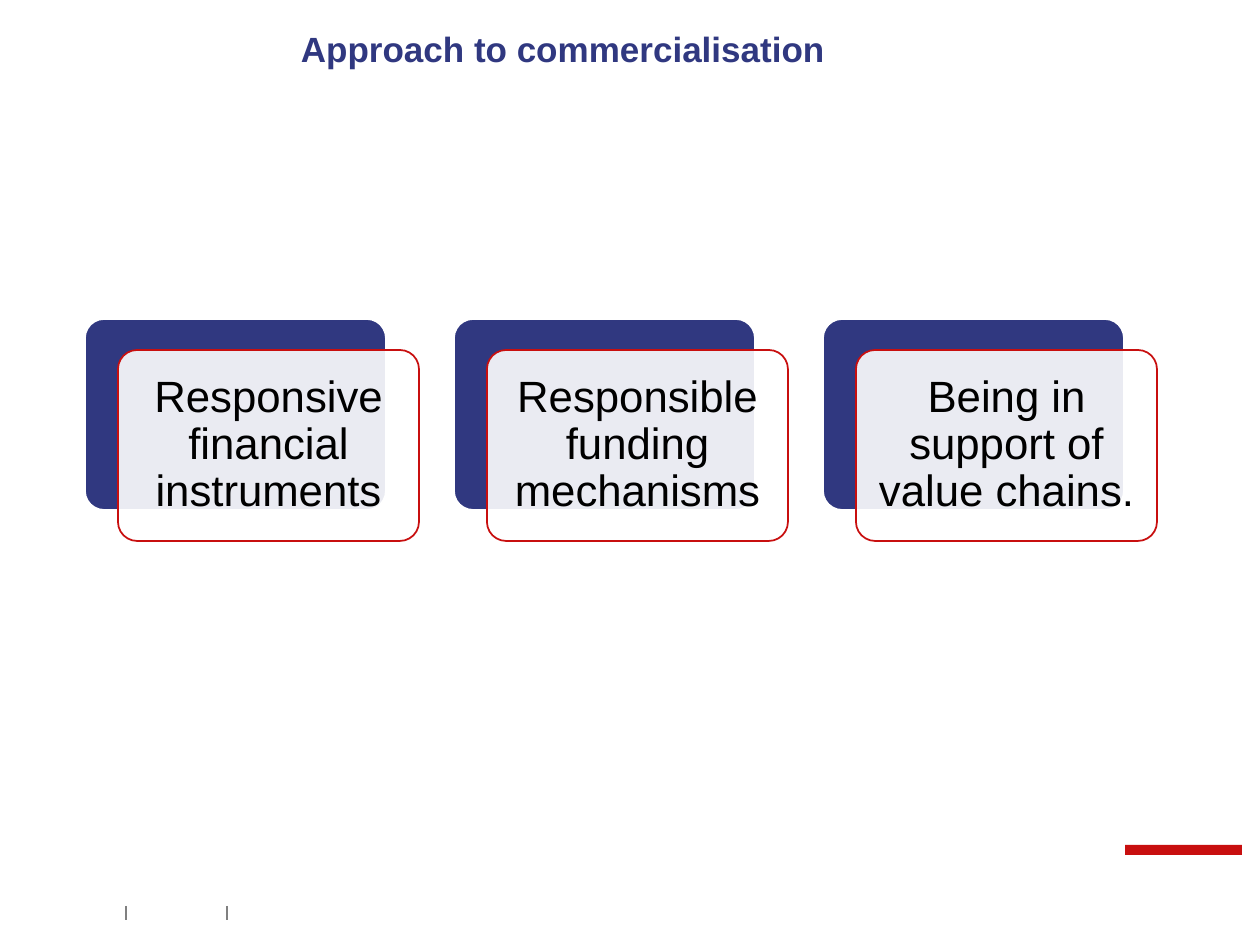
"""Build the slide on the approach to commercialisation."""
import pptx
import pptx.dml.color
import pptx.enum.shapes
import pptx.enum.text
import pptx.oxml
import pptx.oxml.ns
import pptx.util
from lxml import etree

EMU_PER_PX = 914400 / 126
NAVY, RED, GREY, WHITE, BLACK = "303880", "C80F0F", "808080", "FFFFFF", "000000"
SHAPES = pptx.enum.shapes.MSO_SHAPE
CARDS = [
    "Responsive financial instruments",
    "Responsible funding mechanisms",
    "Being in support of value chains.",
]
CARD_LEFT, CARD_TOP, CARD_PITCH = 85, 319, 369
CARD_WIDTH, CARD_HEIGHT = 301, 191
FRONT_SHIFT_X, FRONT_SHIFT_Y = 33, 31


def px(length):
    """Turn pixels into EMU."""
    return pptx.util.Emu(round(length * EMU_PER_PX))


def paint(color_format, color):
    """Set a colour from a hex string."""
    color_format.rgb = pptx.dml.color.RGBColor.from_string(color)


def add_block(shapes, kind, box, fill, line=None):
    """Add a filled preset shape, outlined if a line colour is given."""
    shape = shapes.add_shape(kind, *map(px, box))
    shape.shadow.inherit = False
    shape.fill.solid()
    paint(shape.fill.fore_color, fill)
    if line:
        paint(shape.line.color, line)
        shape.line.width = pptx.util.Pt(1)
    else:
        shape.line.fill.background()
    return shape


def set_opacity(shape, percent):
    """Make the solid fill of a shape partly transparent."""
    color = shape.fill._xPr.find(".//" + pptx.oxml.ns.qn("a:srgbClr"))
    alpha = etree.SubElement(color, pptx.oxml.ns.qn("a:alpha"))
    alpha.set("val", str(percent * 1000))


def write(text_frame, text, size, color, bold=False):
    """Write one centred paragraph and return it."""
    text_frame.word_wrap = True
    paragraph = text_frame.paragraphs[0]
    paragraph.alignment = pptx.enum.text.PP_ALIGN.CENTER
    paragraph.space_before = pptx.util.Pt(0)
    run = paragraph.add_run()
    run.text = text
    run.font.name = "Arial"
    run.font.size = pptx.util.Pt(size)
    run.font.bold = bold
    paint(run.font.color, color)
    return paragraph


def add_title(slide, text):
    """Place and format the title placeholder."""
    title = slide.shapes.title
    title.left, title.top, title.width, title.height = map(px, (248, 21, 630, 55))
    title.text_frame.vertical_anchor = pptx.enum.text.MSO_ANCHOR.TOP
    title.text_frame.auto_size = pptx.enum.text.MSO_AUTO_SIZE.NONE
    write(title.text_frame, text, 20, NAVY, bold=True)


def add_card(shapes, left, text):
    """Add a navy card with a translucent text card in front."""
    back = (left, CARD_TOP, CARD_WIDTH, CARD_HEIGHT)
    front = (left + FRONT_SHIFT_X, CARD_TOP + FRONT_SHIFT_Y, CARD_WIDTH, CARD_HEIGHT)
    back_card = add_block(shapes, SHAPES.ROUNDED_RECTANGLE, back, NAVY, WHITE)
    front_card = add_block(shapes, SHAPES.ROUNDED_RECTANGLE, front, WHITE, RED)
    for card in (back_card, front_card):
        card.adjustments[0] = 0.1
    set_opacity(front_card, 90)
    frame = front_card.text_frame
    frame.margin_left = frame.margin_right = px(13)
    frame.margin_top = frame.margin_bottom = px(13)
    frame.vertical_anchor = pptx.enum.text.MSO_ANCHOR.MIDDLE
    write(frame, text, 25, BLACK).line_spacing = 0.9


def add_divider(shapes, left):
    """Add a thin vertical footer line."""
    connector = shapes.add_connector(
        pptx.enum.shapes.MSO_CONNECTOR.STRAIGHT, *map(px, (left, 906, left, 920))
    )
    paint(connector.line.color, GREY)
    connector.line.width = pptx.util.Pt(0.75)
    properties = connector._element.spPr
    etree.SubElement(properties, pptx.oxml.ns.qn("a:effectLst"))


def main():
    """Build and save the presentation."""
    presentation = pptx.Presentation()
    presentation.slide_width, presentation.slide_height = px(1260), px(945)
    slide = presentation.slides.add_slide(presentation.slide_layouts[5])
    add_block(slide.shapes, SHAPES.RECTANGLE, (1125, 845, 117, 10), RED)
    for left in (126, 227):
        add_divider(slide.shapes, left)
    add_title(slide, "Approach to commercialisation")
    group = slide.shapes.add_group_shape()
    for index, text in enumerate(CARDS):
        add_card(group.shapes, CARD_LEFT + index * CARD_PITCH, text)
    presentation.save("out.pptx")


if __name__ == "__main__":
    main()
